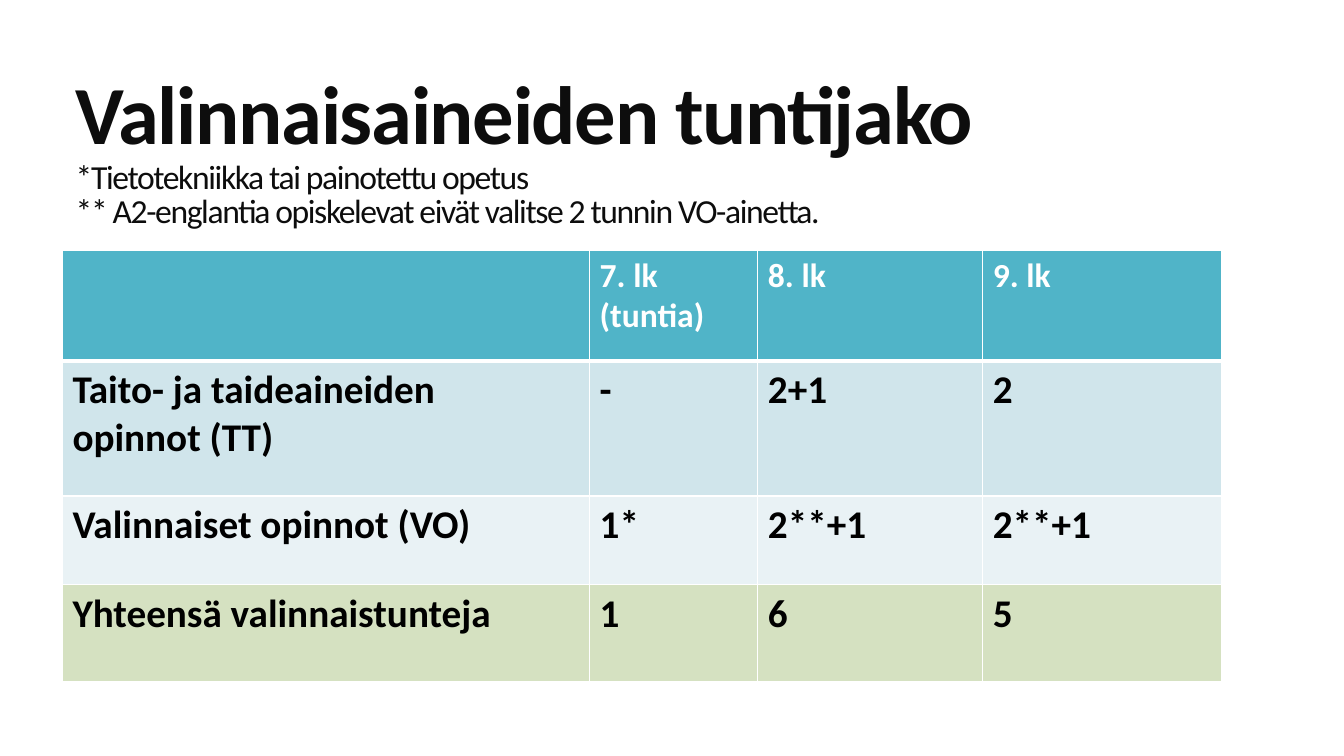
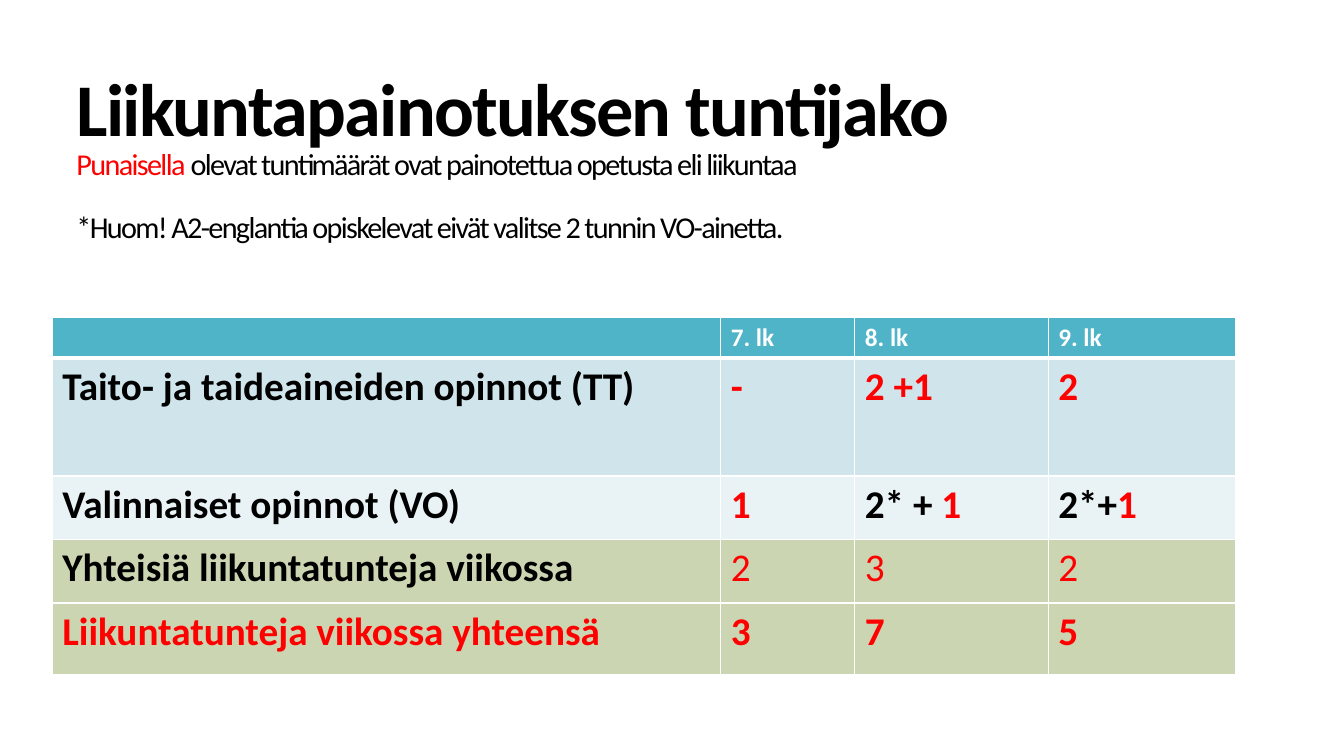
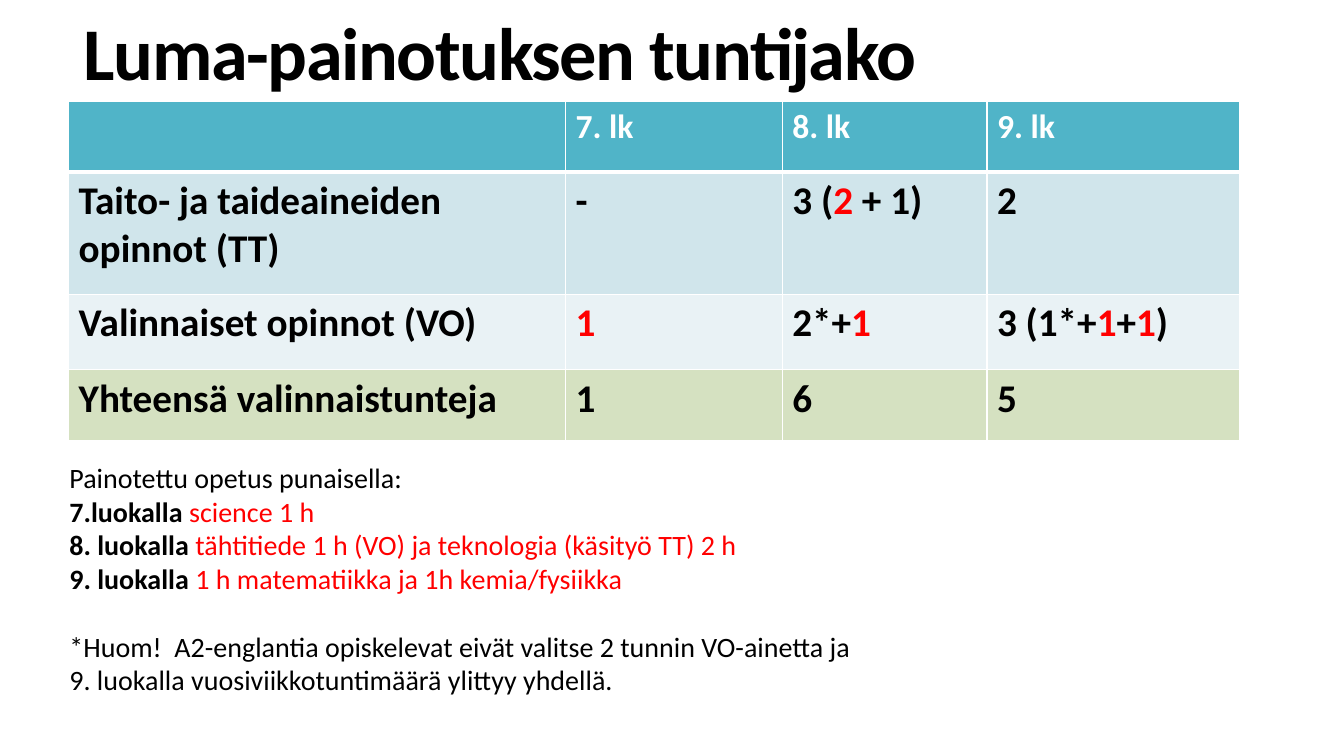
from dataclasses import dataclass

from lxml import etree
from pptx import Presentation
from pptx.dml.color import RGBColor
from pptx.enum.text import MSO_ANCHOR
from pptx.oxml.ns import qn
from pptx.util import Pt

TOP = MSO_ANCHOR.TOP
BOTTOM = MSO_ANCHOR.BOTTOM


@dataclass(frozen=True)
class Theme:
    font: str = "Calibri"
    ink: str = "000000"
    soft: str = "0D0D0D"
    red: str = "FF0000"
    white: str = "FFFFFF"
    teal: str = "50B4C8"
    pale: str = "D0E5EB"
    mist: str = "E9F2F5"
    green: str = "D5E1C1"
    olive: str = "CBD5B2"
    huge: float = 59
    large: float = 53.1
    cell: float = 28
    head: float = 24
    note: float = 21.6
    body: float = 20
    small: float = 18
    tight: float = 0.85


THEME = Theme()


def ink(text, bold=True):
    return text, THEME.ink, bold


def red(text, bold=True):
    return text, THEME.red, bold


def soft(text, bold=True):
    return text, THEME.soft, bold


class Deck:
    def __init__(self, theme):
        self.theme = theme
        self.show = Presentation()
        self.show.slide_width = Pt(960)
        self.show.slide_height = Pt(540)
        self.slide = None

    def page(self):
        self.slide = self.show.slides.add_slide(self.show.slide_layouts[6])

    def fill_runs(self, para, runs, size, track=0):
        for text, color, bold in runs:
            run = para.add_run()
            run.text = text
            run.font.name = self.theme.font
            run.font.size = Pt(size)
            run.font.bold = bold
            run.font.color.rgb = RGBColor.from_string(color)
            if track:
                run._r.get_or_add_rPr().set("spc", str(int(track * 100)))

    def text(self, box, lines, anchor=TOP, space=1.0, track=0):
        frame = self.slide.shapes.add_textbox(*map(Pt, box)).text_frame
        frame.word_wrap = True
        frame.vertical_anchor = anchor
        for i, (size, gap, *runs) in enumerate(lines):
            para = frame.add_paragraph() if i else frame.paragraphs[0]
            para.line_spacing = space
            para.space_before = Pt(gap)
            self.fill_runs(para, runs, size, track)

    def title(self, box, lines, track=-1):
        self.text(box, lines, BOTTOM, self.theme.tight, track)

    def edge(self, cell, side, width):
        line = etree.SubElement(cell._tc.get_or_add_tcPr(), qn("a:ln" + side))
        line.set("w", str(Pt(width)))
        fill = etree.SubElement(line, qn("a:solidFill"))
        etree.SubElement(fill, qn("a:srgbClr")).set("val", self.theme.white)

    def table(self, left, top, cols, rows, fills, heads, body, size):
        shape = self.slide.shapes.add_table(
            len(rows), len(cols), Pt(left), Pt(top), Pt(sum(cols)), Pt(sum(rows)))
        grid = shape.table
        grid.first_row = grid.horz_banding = False
        for col, width in zip(grid.columns, cols):
            col.width = Pt(width)
        for row, height in zip(grid.rows, rows):
            row.height = Pt(height)
        top_row = [[]] + [[(text, self.theme.white, True)] for text in heads]
        for r, (line, fill) in enumerate(zip([top_row] + body, [self.theme.teal] + fills)):
            for c, runs in enumerate(line):
                cell = grid.cell(r, c)
                for side in "LRTB":
                    thick = (r, side) in ((0, "B"), (1, "T"))
                    self.edge(cell, side, 3 if thick else 1)
                cell.fill.solid()
                cell.fill.fore_color.rgb = RGBColor.from_string(fill)
                runs = [ink(runs)] if isinstance(runs, str) else runs
                self.fill_runs(cell.text_frame.paragraphs[0], runs, self.theme.cell if r else size)


def hours(deck):
    t = deck.theme
    deck.page()
    deck.title((47, 34, 888, 134), [
        (t.huge, 0, soft("Valinnaisaineiden tuntijako")),
        (t.head, 0, soft("*Tietotekniikka tai painotettu opetus", False)),
        (t.head, 0, soft("** A2-englantia opiskelevat eivät valitse 2 tunnin VO-ainetta.", False)),
    ])
    deck.table(
        44.6, 178.6, [376.6, 120.2, 160.6, 170.6], [79.2, 96.5, 63.4, 69.1],
        [t.pale, t.mist, t.green], ["7. lk (tuntia)", "8. lk", "9. lk"], [
            ["Taito- ja taideaineiden  opinnot (TT)", "-", "2+1", "2"],
            ["Valinnaiset opinnot (VO)", "1*", "2**+1", "2**+1"],
            ["Yhteensä valinnaistunteja", "1", "6", "5"],
        ], t.head)


def sport(deck):
    t = deck.theme
    deck.page()
    deck.title((47.5, 36, 841, 142), [
        (t.large, 0, ink("Liikuntapainotuksen tuntijako")),
        (t.note, 0, red("Punaisella ", False),
         ink("olevat tuntimäärät ovat painotettua opetusta eli liikuntaa", False)),
        (t.note, 22.4, ink("*Huom! A2-englantia opiskelevat eivät valitse 2 tunnin VO-ainetta.", False)),
    ], -1.2)
    deck.table(
        37.4, 226.8, [477.4, 95.8, 138.2, 133.9], [29, 84.2, 45.4, 45.4, 51.1],
        [t.pale, t.mist, t.olive, t.olive], ["7. lk", "8. lk", "9. lk"], [
            ["Taito- ja taideaineiden opinnot (TT)", [red("-")], [red("2 +1")], [red("2")]],
            ["Valinnaiset opinnot (VO)", [red("1")],
             [ink("2* + "), red("1")], [ink("2*+"), red("1")]],
            ["Yhteisiä liikuntatunteja viikossa"] + [[red(n, False)] for n in "232"],
            [[red("Liikuntatunteja viikossa yhteensä")]] + [[red(n)] for n in "375"],
        ], t.small)


def luma(deck):
    t = deck.theme
    deck.page()
    deck.title((52.6, 4, 804, 68), [(t.large, 0, ink("Luma-painotuksen tuntijako"))])
    deck.text((42.5, 325.4, 842, 201), [
        (t.body, 0, ink("Painotettu opetus punaisella:", False)),
        (t.body, 0, ink("7.luokalla "), red("science 1 h", False)),
        (t.body, 0, ink("8. luokalla "),
         red("tähtitiede 1 h (VO) ja teknologia (käsityö TT) 2 h", False)),
        (t.body, 0, ink("9. luokalla "), red("1 h matematiikka ja 1h kemia/fysiikka", False)),
        (t.body, 24.4, ink("*Huom!  A2-englantia opiskelevat eivät valitse 2 tunnin VO-ainetta ja", False)),
        (t.body, 0, ink("9. luokalla vuosiviikkotuntimäärä ylittyy yhdellä.", False)),
    ])
    deck.table(
        49, 72.7, [355, 154.8, 146.2, 180.7], [50.4, 87.1, 54, 50.4],
        [t.pale, t.mist, t.green], ["7. lk", "8. lk", "9. lk"], [
            ["Taito- ja taideaineiden  opinnot (TT)", "-",
             [ink("3 ("), red("2"), ink(" + 1)")], "2"],
            ["Valinnaiset opinnot (VO)", [red("1")], [ink("2*+"), red("1")],
             [ink("3 (1*+"), red("1"), ink("+"), red("1"), ink(")")]],
            ["Yhteensä valinnaistunteja", "1", "6", "5"],
        ], t.head)


def main():
    deck = Deck(THEME)
    hours(deck)
    sport(deck)
    luma(deck)
    deck.show.save("out.pptx")


if __name__ == "__main__":
    main()
